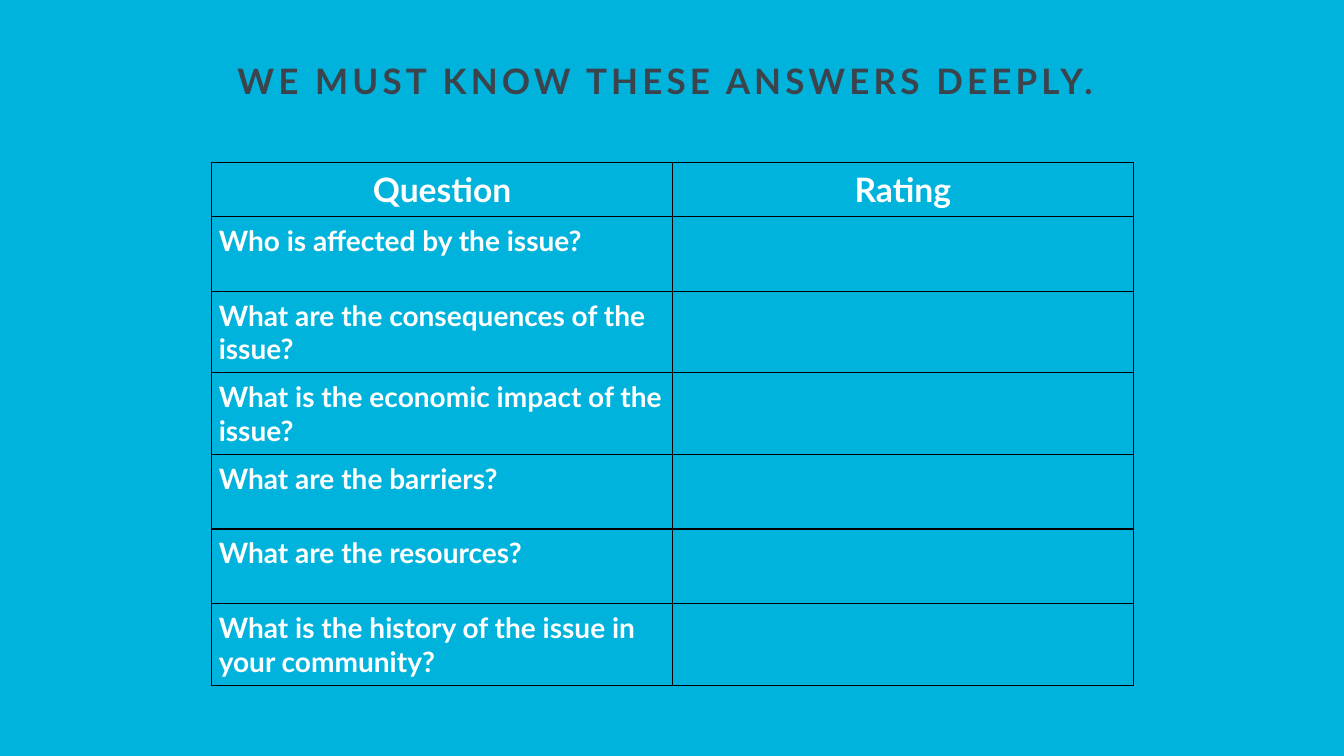
from pptx import Presentation
from pptx.dml.color import RGBColor
from pptx.enum.shapes import MSO_SHAPE
from pptx.enum.text import MSO_ANCHOR, MSO_AUTO_SIZE, PP_ALIGN
from pptx.oxml import parse_xml
from pptx.oxml.ns import nsdecls
from pptx.util import Inches, Pt

COLORS = {"background": "00B3DC", "title": "3B444D", "text": "FFFFFF", "border": "000000"}
QUESTIONS = [
    "Who is affected by the issue?",
    "What are the consequences of the issue?",
    "What is the economic impact of the issue?",
    "What are the barriers?",
    "What are the resources?",
    "What is the history of the issue in your community?",
]
ROWS = [("Question", "Rating")] + [(question, "") for question in QUESTIONS]


def write(p, text, size, color):
    r = p.add_run()
    r.text = text
    font = {"name": "Lato", "size": Pt(size), "bold": True}
    for name, value in font.items():
        setattr(r.font, name, value)
    r.font.color.rgb = RGBColor.from_string(COLORS[color])
    return r


def add_borders(cell):
    tcPr = cell._tc.get_or_add_tcPr()
    for i, side in enumerate(("lnL", "lnR", "lnT", "lnB")):
        tcPr.insert(i, parse_xml(
            f'<a:{side} {nsdecls("a")} w="{Pt(1)}"><a:solidFill>'
            f'<a:srgbClr val="{COLORS["border"]}"/></a:solidFill></a:{side}>'))


prs = Presentation()
prs.slide_width, prs.slide_height = Inches(13.33), Inches(7.5)
s = prs.slides.add_slide(prs.slide_layouts[5])

panel = s.shapes.add_shape(MSO_SHAPE.RECTANGLE, 0, 0, prs.slide_width, prs.slide_height)
panel.shadow.inherit = False
panel.fill.solid()
panel.fill.fore_color.rgb = RGBColor.from_string(COLORS["background"])
panel.line.fill.background()
s.shapes._spTree.insert(2, panel._element)

title = s.shapes.title
box = {"left": 0, "top": Inches(0.59), "width": prs.slide_width, "height": Inches(0.54)}
for name, value in box.items():
    setattr(title, name, value)
tf = title.text_frame
frame = {"word_wrap": True, "auto_size": MSO_AUTO_SIZE.NONE, "vertical_anchor": MSO_ANCHOR.TOP}
for name, value in frame.items():
    setattr(tf, name, value)
p = tf.paragraphs[0]
p.alignment = PP_ALIGN.CENTER
p.line_spacing = 0.9
r = write(p, "WE MUST KNOW THESE ANSWERS DEEPLY. ", 25, "title")
r._r.get_or_add_rPr().set("spc", "300")

table = s.shapes.add_table(len(ROWS), 2, Inches(2.1), Inches(1.61), Inches(9.14), Inches(4.83)).table
table.first_row = table.horz_banding = False
for i, texts in enumerate(ROWS):
    table.rows[i].height = Inches(0.74 if i else 0.39)
    for j, text in enumerate(texts):
        cell = table.cell(i, j)
        for side in ("left", "top", "right", "bottom"):
            setattr(cell, f"margin_{side}", Inches(0.07))
        cell.fill.background()
        add_borders(cell)
        if text:
            p = cell.text_frame.paragraphs[0]
            p.alignment = PP_ALIGN.LEFT if i else PP_ALIGN.CENTER
            write(p, text, 20 if i else 24, "text")

prs.save("out.pptx")
